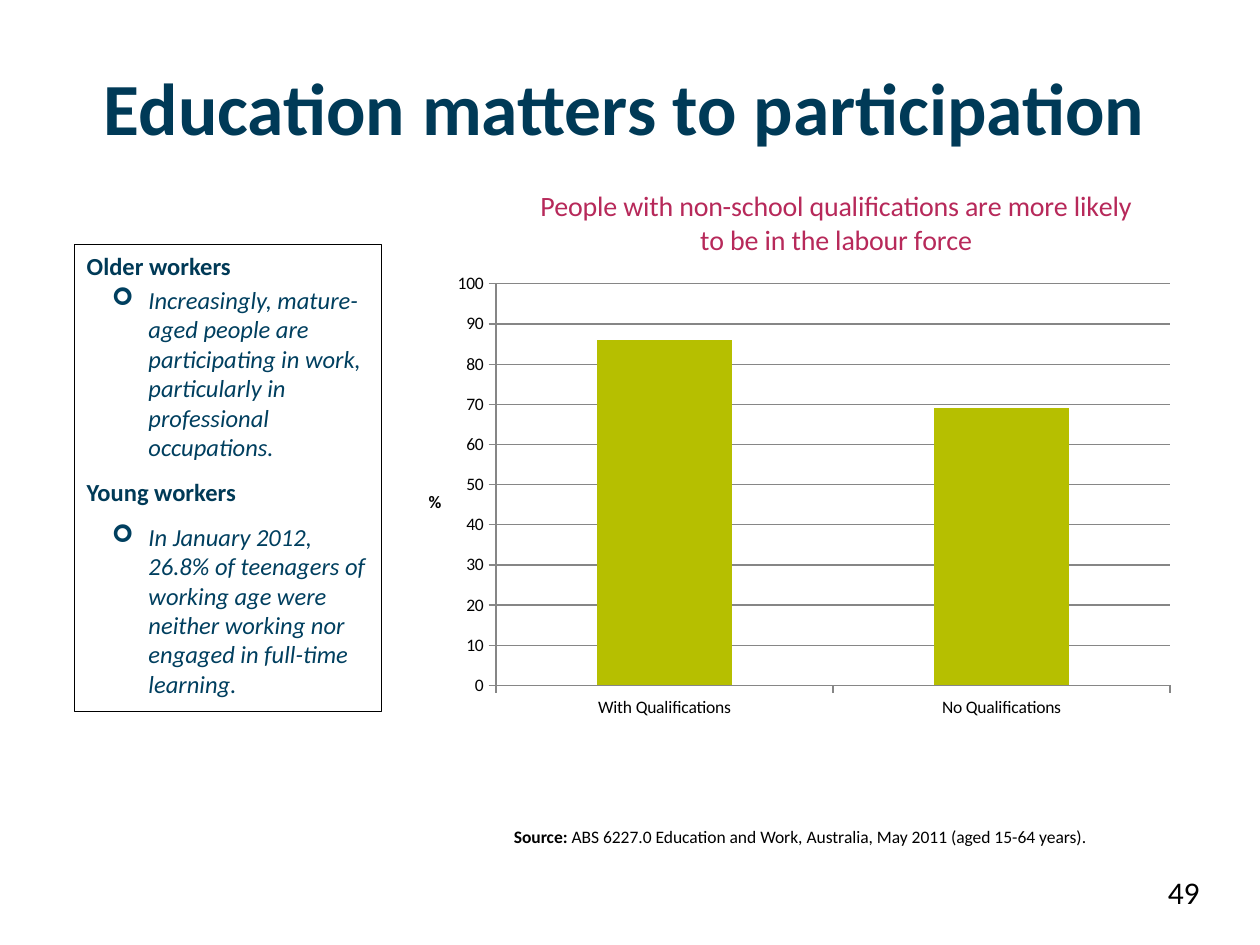
from lxml.etree import SubElement
from pptx import Presentation
from pptx.chart.data import CategoryChartData
from pptx.dml.color import RGBColor
from pptx.enum.chart import XL_CHART_TYPE, XL_TICK_MARK
from pptx.enum.shapes import MSO_SHAPE
from pptx.enum.text import MSO_ANCHOR, PP_ALIGN
from pptx.oxml import parse_xml
from pptx.oxml.ns import nsdecls, qn
from pptx.util import Inches, Pt

WIDTH, HEIGHT = Inches(10), Inches(7.5)
FONT = "Calibri"
BLACK, NAVY, TEAL, GREY = "000000", "003A57", "003F5F", "868686"
PINK, GREEN = "B7295A", "B6BF00"


def colour(value):
    return RGBColor.from_string(value)


def area(left, top, width, height):
    return (int(WIDTH * left / 100), int(HEIGHT * top / 100),
            int(WIDTH * width / 100), int(HEIGHT * height / 100))


def format_font(font, size=14, color=BLACK, bold=False, italic=False):
    font.name = FONT
    font.size = Pt(size)
    font.bold = bold
    font.italic = italic
    font.color.rgb = colour(color)


def write(paragraph, text, **style):
    run = paragraph.add_run()
    run.text = text
    format_font(run.font, **style)


def add_textbox(slide, position, wrap=True):
    frame = slide.shapes.add_textbox(*area(*position)).text_frame
    frame.word_wrap = wrap
    return frame.paragraphs[0]


def add_bullet(paragraph, symbol, color):
    properties = paragraph._p.get_or_add_pPr()
    properties.set("marL", str(Inches(0.49)))
    properties.set("indent", str(Inches(-0.29)))
    bullet_colour = SubElement(properties, qn("a:buClr"))
    SubElement(bullet_colour, qn("a:srgbClr"), val=color)
    SubElement(properties, qn("a:buFont"), typeface="Wingdings")
    SubElement(properties, qn("a:buChar"), char=symbol)


def add_panel(slide, position, sections):
    panel = slide.shapes.add_shape(MSO_SHAPE.RECTANGLE, *area(*position))
    panel.shadow.inherit = False
    panel.fill.background()
    panel.line.color.rgb = colour(BLACK)
    panel.line.width = Pt(0.75)
    frame = panel.text_frame
    frame.word_wrap = True
    frame.vertical_anchor = MSO_ANCHOR.TOP
    for index, (heading, detail) in enumerate(sections):
        first = index == 0
        paragraph = frame.paragraphs[0] if first else frame.add_paragraph()
        paragraph.alignment = PP_ALIGN.LEFT
        if not first:
            paragraph.space_before, paragraph.space_after = Pt(2.8), Pt(6)
        write(paragraph, heading, color=NAVY, bold=True)
        paragraph = frame.add_paragraph()
        paragraph.alignment = PP_ALIGN.LEFT
        paragraph.space_before, paragraph.space_after = Pt(2.8), Pt(6)
        add_bullet(paragraph, "➢", TEAL)
        write(paragraph, detail, color=TEAL, italic=True)


def place(element, target=None, **shares):
    for old in element.findall(qn("c:layout")):
        element.remove(old)
    modes = {"xMode": "edge", "yMode": "edge"}
    values = {**modes, **shares}
    if target:
        values = {"layoutTarget": target, **values}
    items = "".join(f'<c:{name} val="{value}"/>' for name, value in values.items())
    layout = parse_xml(f'<c:layout {nsdecls("c")}><c:manualLayout>{items}'
                       "</c:manualLayout></c:layout>")
    text = element.find(qn("c:tx"))
    if text is None:
        element.insert(0, layout)
    else:
        text.addnext(layout)


def format_axis(axis):
    axis.major_tick_mark = XL_TICK_MARK.OUTSIDE
    axis.minor_tick_mark = XL_TICK_MARK.NONE
    axis.format.line.color.rgb = colour(GREY)
    format_font(axis.tick_labels.font, size=10)


def add_column_chart(slide, position, title, unit, values):
    data = CategoryChartData()
    data.categories = list(values)
    data.add_series("Series 1", list(values.values()))
    chart = slide.shapes.add_chart(
        XL_CHART_TYPE.COLUMN_CLUSTERED, *area(*position), data).chart
    format_font(chart.font, size=10)
    chart.has_legend = False
    chart.has_title = True
    heading = chart.chart_title
    write(heading.text_frame.paragraphs[0], title, size=16, color=PINK)
    heading.include_in_layout = False
    place(heading._element, x=0.17, y=0.03)

    plot = chart.plots[0]
    plot.gap_width = 150
    plot.vary_by_categories = False
    fill = plot.series[0].format.fill
    fill.solid()
    fill.fore_color.rgb = colour(GREEN)

    format_axis(chart.category_axis)
    value_axis = chart.value_axis
    format_axis(value_axis)
    value_axis.minimum_scale, value_axis.maximum_scale = 0, 100
    value_axis.major_unit = 10
    value_axis.has_major_gridlines = True
    value_axis.major_gridlines.format.line.color.rgb = colour(GREY)
    label = value_axis.axis_title
    write(label.text_frame.paragraphs[0], unit, size=10, bold=True)
    body = label.text_frame._txBody.bodyPr
    body.set("rot", "0")
    body.set("vert", "horz")
    place(label._element, x=0.03, y=0.57)
    plot_area = chart._chartSpace.chart.plotArea
    place(plot_area, "inner", x=0.12, y=0.21, w=0.86, h=0.71)


def main():
    presentation = Presentation()
    presentation.slide_width, presentation.slide_height = WIDTH, HEIGHT
    slide = presentation.slides.add_slide(presentation.slide_layouts[6])

    title = add_textbox(slide, (6.7, 5.87, 85.7, 10.8), wrap=False)
    title.alignment = PP_ALIGN.CENTER
    write(title, "Education matters to participation", size=42, color=NAVY, bold=True)

    add_panel(slide, (5.9, 25.87, 24.4, 49.47), [
        ("Older workers",
         "Increasingly, mature-aged people are participating in work, "
         "particularly in professional occupations."),
        ("Young workers",
         "In January 2012, 26.8% of teenagers of working age were neither "
         "working nor engaged in full-time learning."),
    ])

    add_column_chart(
        slide, (31.9, 17.47, 62.2, 59.87),
        "People with non-school qualifications are more likely to be in the labour force",
        "%", {"With Qualifications": 86, "No Qualifications": 69})

    source = add_textbox(slide, (39.8, 86.8, 50.4, 3.6))
    write(source, "Source: ", size=10, bold=True)
    write(source, "ABS 6227.0 Education and Work, Australia, May 2011 (aged 15-64 years).",
          size=10)

    number = add_textbox(slide, (91.7, 91.73, 8.3, 8.27))
    write(number, "49", size=18)

    presentation.save("out.pptx")


if __name__ == "__main__":
    main()
